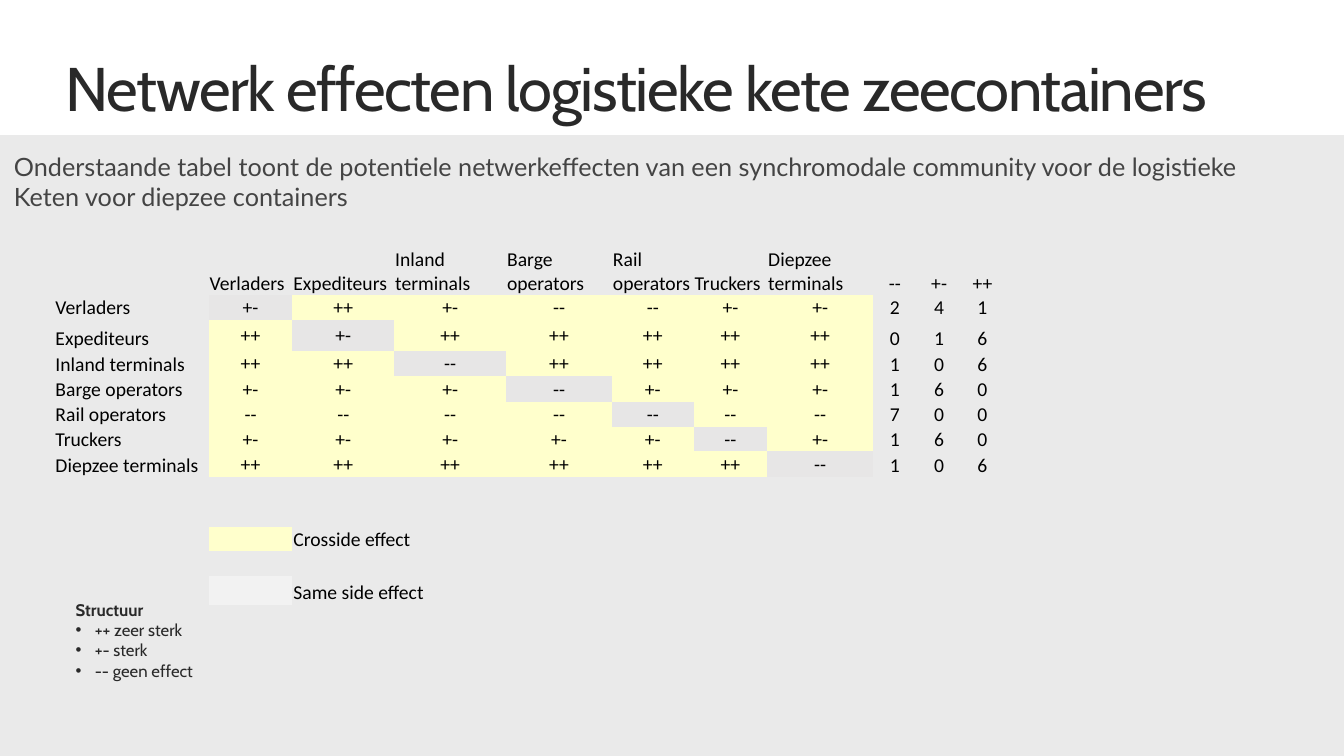
import pptx
import pptx.dml.color
import pptx.enum.shapes
import pptx.enum.text
import pptx.oxml.ns
import pptx.util
from lxml import etree

Inches = pptx.util.Inches
Pt = pptx.util.Pt
qn = pptx.oxml.ns.qn
Align = pptx.enum.text.PP_ALIGN
Anchor = pptx.enum.text.MSO_ANCHOR


class Theme:
    title_font, body_font, table_font = "Cabin", "Lato", "Calibri"
    title_size, intro_size, table_size, key_size = 44, 18, 14, 12
    title_ink, intro_ink, table_ink = "292929", "444444", "000000"
    panel, cross_side, same_side, same_side_key = "EAEAEA", "FFFFCC", "E7E6E6", "F2F2F2"


def paint(fill, color):
    fill.solid()
    fill.fore_color.rgb = pptx.dml.color.RGBColor.from_string(color)


def write(frame, text, font=Theme.table_font, size=Theme.table_size, color=Theme.table_ink,
          align=Align.LEFT, line_spacing=None, tracking=None, heading=False):
    """Put one paragraph per line; with heading, the first is bold and the rest are bullets."""
    for i, line in enumerate(text.split("\n")):
        paragraph = frame.paragraphs[0] if i == 0 else frame.add_paragraph()
        paragraph.alignment = align
        if line_spacing:
            paragraph.line_spacing = line_spacing
        if heading and i > 0:
            props = paragraph._p.get_or_add_pPr()
            props.set("marL", str(Inches(0.19)))
            props.set("indent", str(Inches(-0.19)))
            etree.SubElement(props, qn("a:buFont")).set("typeface", "Arial")
            etree.SubElement(props, qn("a:buChar")).set("char", "•")
        if not line:
            etree.SubElement(paragraph._p, qn("a:endParaRPr")).set("sz", str(size * 100))
            continue
        run = paragraph.add_run()
        run.text = line
        run.font.name = font
        run.font.size = Pt(size)
        run.font.bold = heading and i == 0
        run.font.color.rgb = pptx.dml.color.RGBColor.from_string(color)
        if tracking:
            run.font._element.set("spc", str(tracking))


deck = pptx.Presentation()
deck.slide_width = Inches(13.33)
deck.slide_height = Inches(7.5)
slide = deck.slides.add_slide(deck.slide_layouts[6])

# Grey panel below the title
panel = slide.shapes.add_shape(pptx.enum.shapes.MSO_SHAPE.RECTANGLE,
                               Inches(0), Inches(1.34), Inches(13.33), Inches(6.16))
panel.shadow.inherit = False
paint(panel.fill, Theme.panel)
panel.line.fill.background()

# Title and introduction
title = slide.shapes.add_textbox(Inches(0.55), Inches(0.53), Inches(12.21), Inches(0.67)).text_frame
title.word_wrap = True
write(title, "Netwerk effecten logistieke kete zeecontainers", font=Theme.title_font,
      size=Theme.title_size, color=Theme.title_ink, line_spacing=0.9, tracking=-100)

intro = slide.shapes.add_textbox(Inches(0.04), Inches(1.45), Inches(12.52), Inches(1.01)).text_frame
intro.word_wrap = True
write(intro, "Onderstaande tabel toont de potentiele netwerkeffecten van een synchromodale "
      "community voor de logistieke\nKeten voor diepzee containers",
      font=Theme.body_font, size=Theme.intro_size, color=Theme.intro_ink)

# Effects of each party (row) on each party (column)
effects = {
    "Verladers": "+- ++ +- -- -- +- +-",
    "Expediteurs": "++ +- ++ ++ ++ ++ ++",
    "Inland terminals": "++ ++ -- ++ ++ ++ ++",
    "Barge operators": "+- +- +- -- +- +- +-",
    "Rail operators": "-- -- -- -- -- -- --",
    "Truckers": "+- +- +- +- +- -- +-",
    "Diepzee terminals": "++ ++ ++ ++ ++ ++ --",
}
scores = ["--", "+-", "++"]
parties = len(effects)
rows = [["", *effects, *scores]]
for party, marks in effects.items():
    marks = marks.split()
    rows.append([party, *marks, *(str(marks.count(score)) for score in scores)])

# Legend rows under the matrix, each after an empty row
legend = {10: ("Crosside effect", Theme.cross_side), 12: ("Same side effect", Theme.same_side_key)}
column_widths = [1.53, 0.83, 1.01, 1.11, 1.05, 0.81, 0.73, 1.05, 0.43, 0.45, 0.41]
row_heights = [0.93, 0.24, 0.31, 0.25, 0.25, 0.25, 0.24, 0.26, 0.24, 0.24, 0.24, 0.24, 0.29]
for r in range(len(rows), len(row_heights)):
    rows.append([""] * len(column_widths))
    if r in legend:
        rows[r][2] = legend[r][0]

# Table
matrix_frame = slide.shapes.add_table(len(row_heights), len(column_widths), Inches(0.54), Inches(2),
                                      Inches(sum(column_widths)), Inches(sum(row_heights)))
matrix = matrix_frame.table
matrix.first_row = matrix.horz_banding = False
no_grid = "{2D5ABB26-0587-4C30-8999-92F81FD0307C}"
matrix._tbl.tblPr.find(qn("a:tableStyleId")).text = no_grid
for column, width in zip(matrix.columns, column_widths):
    column.width = Inches(width)
for row, height in zip(matrix.rows, row_heights):
    row.height = Inches(height)

for r, values in enumerate(rows):
    for c, value in enumerate(values):
        cell = matrix.cell(r, c)
        cell.margin_left = cell.margin_right = cell.margin_top = Inches(0.01)
        cell.margin_bottom = Inches(0)
        is_effect = 1 <= r <= parties and 1 <= c <= parties
        is_score = r <= parties < c
        cell.vertical_anchor = Anchor.MIDDLE if is_effect else Anchor.BOTTOM
        write(cell.text_frame, value, align=Align.CENTER if is_effect or is_score else Align.LEFT)
        if is_effect:
            paint(cell.fill, Theme.same_side if r == c else Theme.cross_side)
        elif r in legend and c == 1:
            paint(cell.fill, legend[r][1])
        else:
            cell.fill.background()

for r in legend:
    matrix.cell(r, 2).merge(matrix.cell(r, 3))

# Key to the marks
key = slide.shapes.add_textbox(Inches(0.75), Inches(5.95), Inches(2.98), Inches(0.81)).text_frame
key.word_wrap = True
key.margin_left = key.margin_right = key.margin_top = key.margin_bottom = Inches(0)
write(key, "Structuur\n++ zeer sterk\n+- sterk\n-- geen effect", font=Theme.title_font,
      size=Theme.key_size, color=Theme.title_ink, heading=True)

deck.save("out.pptx")
